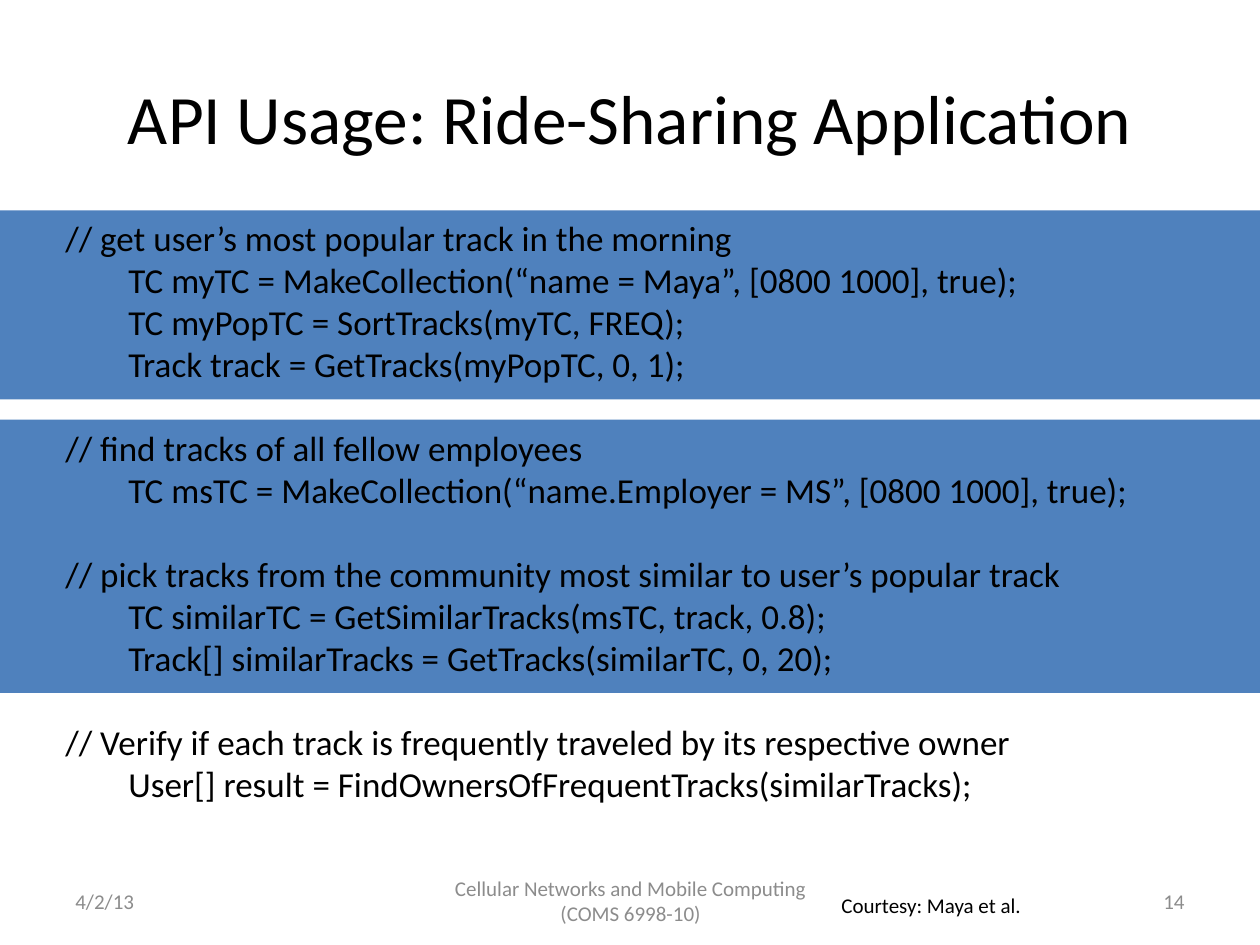
from dataclasses import dataclass
from pptx import Presentation, util as u
from pptx.dml import color
from pptx.enum import shapes, text


@dataclass(frozen=True)
class Theme:
    font: str = "Calibri"
    ink: str = "000000"
    gray: str = "8C8C8C"
    band: str = "4F81BD"
    head: float = 39.6
    code: float = 20
    foot: float = 12
    gap: float = 24


@dataclass(frozen=True)
class Box:
    left: float
    top: float
    width: float
    height: float

    def place(self) -> tuple:
        return tuple(u.Inches(n) for n in (self.left, self.top, self.width, self.height))


@dataclass(frozen=True)
class Label:
    words: str
    box: Box
    size: float
    tint: str
    align: text.PP_ALIGN = text.PP_ALIGN.LEFT
    wrap: bool = True


@dataclass(frozen=True)
class Block:
    note: str
    calls: tuple


THEME = Theme()
LEFT, MID, RIGHT = text.PP_ALIGN.LEFT, text.PP_ALIGN.CENTER, text.PP_ALIGN.RIGHT

BANDS = (Box(0, 1.67, 10, 1.5), Box(0, 3.33, 10, 2.17))

LABELS = (
    Label("API Usage: Ride-Sharing Application", Box(0.5, 0.3, 9, 1.25),
          THEME.head, THEME.ink, MID),
    Label("4/2/13", Box(0.5, 6.95, 2.33, 0.4), THEME.foot, THEME.gray),
    Label("Cellular Networks and Mobile Computing (COMS 6998-10)",
          Box(3.42, 6.95, 3.17, 0.4), THEME.foot, THEME.gray, MID),
    Label("14", Box(7.17, 6.95, 2.33, 0.4), THEME.foot, THEME.gray, RIGHT),
    Label("Courtesy: Maya et al.", Box(6.58, 7.03, 1.65, 0.3),
          THEME.foot, THEME.ink, LEFT, False),
)

BLOCKS = (
    Block("// get user’s most popular track in the morning", (
        "TC myTC = MakeCollection(“name = Maya”, [0800 1000], true);",
        "TC myPopTC = SortTracks(myTC, FREQ);",
        "Track track = GetTracks(myPopTC, 0, 1);")),
    Block("// find tracks of all fellow employees", (
        "TC msTC = MakeCollection(“name.Employer = MS”, [0800 1000], true);",)),
    Block("// pick tracks from the community most similar to user’s popular track", (
        "TC similarTC = GetSimilarTracks(msTC, track, 0.8);",
        "Track[] similarTracks = GetTracks(similarTC, 0, 20);")),
    Block("// Verify if each track is frequently traveled by its respective owner", (
        "User[] result = FindOwnersOfFrequentTracks(similarTracks);",)),
)


def draw_band(slide, box: Box) -> None:
    band = slide.shapes.add_shape(shapes.MSO_SHAPE.RECTANGLE, *box.place())
    band.shadow.inherit = False
    band.fill.solid()
    band.fill.fore_color.rgb = color.RGBColor.from_string(THEME.band)
    band.line.fill.background()


def add_run(para, words: str, size: float, tint: str) -> None:
    run = para.add_run()
    run.text = words
    run.font.name = THEME.font
    run.font.size = u.Pt(size)
    run.font.color.rgb = color.RGBColor.from_string(tint)


def draw_label(slide, label: Label) -> None:
    frame = slide.shapes.add_textbox(*label.box.place()).text_frame
    frame.word_wrap = label.wrap
    frame.vertical_anchor = text.MSO_ANCHOR.MIDDLE
    para = frame.paragraphs[0]
    para.alignment = label.align
    add_run(para, label.words, label.size, label.tint)


def draw_code(slide, box: Box, blocks: tuple) -> None:
    frame = slide.shapes.add_textbox(*box.place()).text_frame
    frame.word_wrap = True
    for i, block in enumerate(blocks):
        para = frame.add_paragraph() if i else frame.paragraphs[0]
        if i:
            para.space_before = u.Pt(THEME.gap)
        add_run(para, block.note, THEME.code, THEME.ink)
        for call in block.calls:
            para = frame.add_paragraph()
            para.level = 1
            props = para._p.get_or_add_pPr()
            props.set("marL", str(u.Inches(0.5)))
            props.set("indent", "0")
            add_run(para, call, THEME.code, THEME.ink)


def main() -> None:
    deck = Presentation()
    deck.slide_width, deck.slide_height = u.Inches(10), u.Inches(7.5)
    slide = deck.slides.add_slide(deck.slide_layouts[6])
    for band in BANDS:
        draw_band(slide, band)
    draw_code(slide, Box(0.42, 1.67, 9.42, 4.81), BLOCKS)
    for label in LABELS:
        draw_label(slide, label)
    deck.save("out.pptx")


if __name__ == "__main__":
    main()
